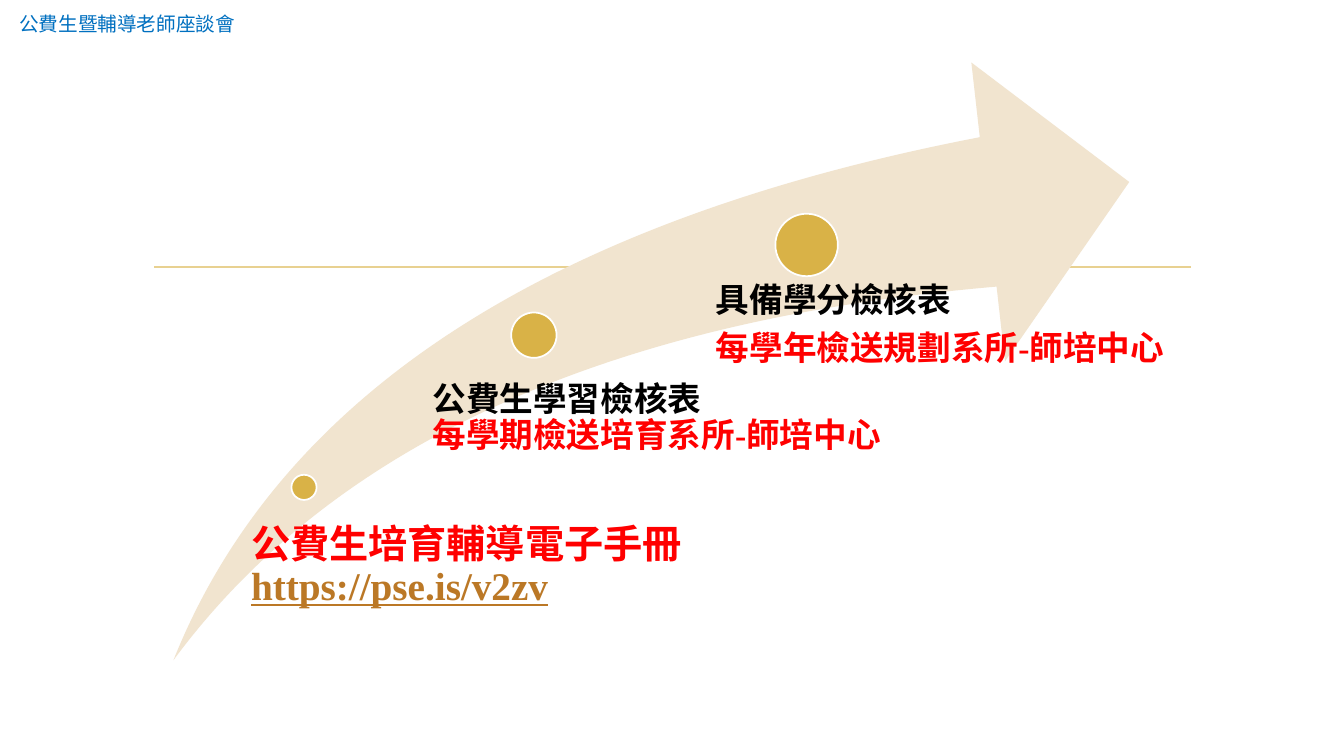
from dataclasses import dataclass

from lxml.etree import SubElement
from pptx import Presentation
from pptx.dml.color import RGBColor
from pptx.enum.shapes import MSO_CONNECTOR as Conn, MSO_SHAPE as Shape
from pptx.enum.text import MSO_ANCHOR as Anchor, MSO_AUTO_SIZE as Auto, PP_ALIGN as Align
from pptx.oxml.ns import qn
from pptx.util import Inches, Pt


@dataclass(frozen=True)
class Theme:
    blue: str = "0070C0"
    red: str = "FF0000"
    black: str = "000000"
    link: str = "BB7826"
    gold: str = "D9B247"
    rule: str = "E8D191"
    sand: str = "F1E4CF"
    white: str = "FFFFFF"
    header_font: str = "Arial"
    step_font: str = "Times New Roman"
    header_size: float = 14
    step_size: float = 24
    lead_size: float = 28
    line_width: float = 1.25


T = Theme()


@dataclass(frozen=True)
class Run:
    text: str
    color: str
    underline: bool = False


@dataclass(frozen=True)
class Step:
    dot: tuple[float, float, float]  # left, top, diameter
    box: tuple[float, float, float, float]
    inset: float
    size: float
    paragraphs: list[list[Run]]


STEPS = [
    Step((2.89, 4.71, 0.25), (2.36, 5.2, 4.81, 0.91), 0.13, T.lead_size,
         [[Run("公費生培育輔導電子手冊", T.red),
           Run("https://pse.is/v2zv", T.link, True)]]),
    Step((5.07, 3.1, 0.45), (4.05, 3.79, 5.32, 1.01), 0.24, T.step_size,
         [[Run("公費生學習檢核表\v", T.black),
           Run("每學期檢送培育系所-師培中心", T.red)]]),
    Step((7.69, 2.12, 0.62), (6.77, 2.81, 5.56, 1.54), 0.33, T.step_size,
         [[Run("具備學分檢核表", T.black)],
          [Run("每學年檢送規劃系所-師培中心", T.red)]]),
]


def rgb(color: str) -> RGBColor:
    return RGBColor.from_string(color)


def apply(target, **values) -> None:
    for name, value in values.items():
        setattr(target, name, value)


def place(sp, *box: float) -> None:
    apply(sp, **dict(zip(("left", "top", "width", "height"), map(Inches, box))))


def add_filled(s, kind, box: tuple, fill: str, outline: str | None = None):
    sp = s.shapes.add_shape(kind, *map(Inches, box))
    sp.shadow.inherit = False
    sp.fill.solid()
    sp.fill.fore_color.rgb = rgb(fill)
    if outline:
        sp.line.color.rgb = rgb(outline)
        sp.line.width = Pt(T.line_width)
    else:
        sp.line.fill.background()
    return sp


def add_header(s, text: str) -> None:
    sp = s.shapes.title
    place(sp, 0.09, 0.08, 5.7, 0.31)
    tf = sp.text_frame
    tf.text = text
    apply(tf, auto_size=Auto.NONE, vertical_anchor=Anchor.MIDDLE, word_wrap=True)
    p = tf.paragraphs[0]
    p.alignment = Align.LEFT
    apply(p.font, name=T.header_font, size=Pt(T.header_size))
    p.font.color.rgb = rgb(T.blue)


def add_rule(s, left: float, right: float, y: float) -> None:
    line = s.shapes.add_connector(Conn.STRAIGHT, *map(Inches, (left, y, right, y)))
    line.line.color.rgb = rgb(T.rule)
    line.line.width = Pt(T.line_width)
    SubElement(line._element.spPr, qn("a:effectLst"))


def add_step(s, step: Step) -> None:
    left, top, diameter = step.dot
    add_filled(s, Shape.OVAL, (left, top, diameter, diameter), T.gold, T.white)
    tf = s.shapes.add_textbox(*map(Inches, step.box)).text_frame
    apply(tf, word_wrap=True, auto_size=Auto.NONE, vertical_anchor=Anchor.TOP,
          margin_left=Inches(step.inset), margin_top=0, margin_right=0, margin_bottom=0)
    for i, runs in enumerate(step.paragraphs):
        p = tf.add_paragraph() if i else tf.paragraphs[0]
        apply(p, line_spacing=0.9, space_after=Pt(0.35 * step.size))
        for run in runs:
            r = p.add_run()
            r.text = run.text.rstrip("\v")
            apply(r.font, name=T.step_font, size=Pt(step.size), bold=True)
            if run.underline:
                r.font.underline = True
            r.font.color.rgb = rgb(run.color)
            if run.text.endswith("\v"):
                p.add_line_break()


def main() -> None:
    prs = Presentation()
    apply(prs, slide_width=Inches(13.33), slide_height=Inches(7.5))
    s = prs.slides.add_slide(prs.slide_layouts[5])

    # Header and rule behind the arrow
    add_rule(s, 1.53, 11.81, 2.65)
    add_header(s, "公費生暨輔導老師座談會")

    # Rising arrow
    arrow = add_filled(s, Shape.SWOOSH_ARROW, (1.72, 0.62, 9.48, 5.93), T.sand)
    arrow.adjustments[0] = arrow.adjustments[1] = 0.25

    # Steps along the arrow
    for step in STEPS:
        add_step(s, step)

    prs.save("out.pptx")


if __name__ == "__main__":
    main()
